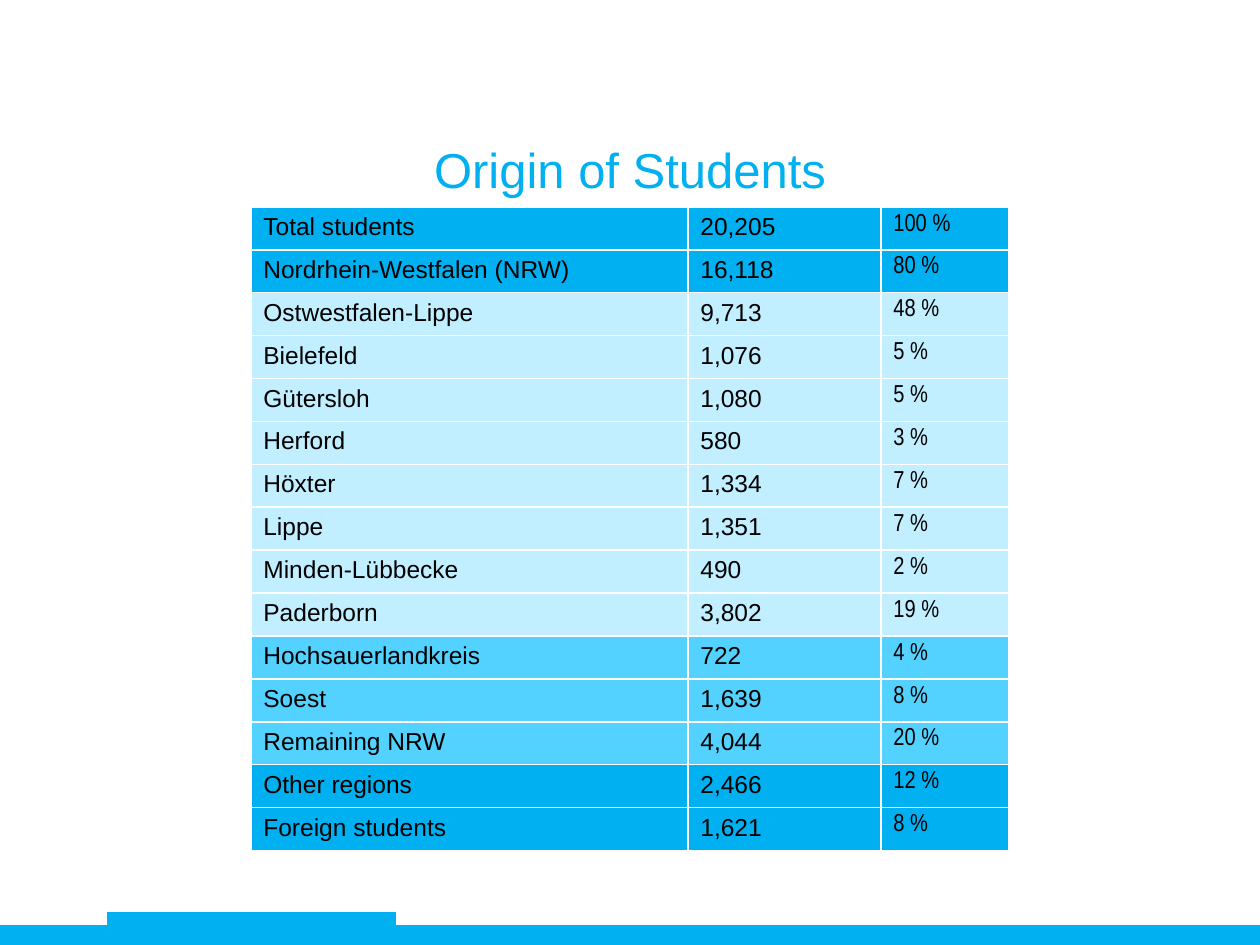
"""Build a slide with a table of the regions students come from."""
import lxml.etree
import pptx
import pptx.dml.color
import pptx.enum.shapes
import pptx.enum.text
import pptx.oxml.ns
import pptx.util

Cm, Pt = pptx.util.Cm, pptx.util.Pt

TITLE = "Origin of Students"
ORIGINS = [
    ("total", "Total students", "20,205", "100 %"),
    ("total", "Nordrhein-Westfalen (NRW)", "16,118", "80 %"),
    ("local", "Ostwestfalen-Lippe", "9,713", "48 %"),
    ("local", "Bielefeld", "1,076", "5 %"),
    ("local", "Gütersloh", "1,080", "5 %"),
    ("local", "Herford", "580", "3 %"),
    ("local", "Höxter", "1,334", "7 %"),
    ("local", "Lippe", "1,351", "7 %"),
    ("local", "Minden-Lübbecke", "490", "2 %"),
    ("local", "Paderborn", "3,802", "19 %"),
    ("state", "Hochsauerlandkreis", "722", "4 %"),
    ("state", "Soest", "1,639", "8 %"),
    ("state", "Remaining NRW", "4,044", "20 %"),
    ("total", "Other regions", "2,466", "12 %"),
    ("total", "Foreign students", "1,621", "8 %"),
]
THEME = {
    "accent": "00B0F0",
    "text": "000000",
    "border": "FFFFFF",
    "groups": {"total": "00B0F0", "local": "C1EFFF", "state": "53D2FF"},
    "title_font": "Arial",
    "column_fonts": ("Arial", "Arial", "Arial Narrow"),
    "title_size": 28,
    "table_size": 14,
    "border_width": 1,
}
SLIDE_SIZE = (25.4, 19.05)
TITLE_BOX = (1.27, 0.94, 22.86, 3.18)
FOOTER_BARS = [(0, 18.65, 25.4, 0.4), (2.16, 18.39, 5.82, 0.33)]
TABLE_TOP, TABLE_HEIGHT = 4.17, 12.98
COLUMN_WIDTHS = (8.81, 3.89, 2.59)


def color(value):
    return pptx.dml.color.RGBColor.from_string(value)


def add_run(paragraph, text, font_name, size, text_color):
    run = paragraph.add_run()
    run.text = text
    run.font.name = font_name
    run.font.size = Pt(size)
    run.font.color.rgb = color(text_color)


def add_footer_bar(slide, box):
    shape = slide.shapes.add_shape(
        pptx.enum.shapes.MSO_SHAPE.RECTANGLE, *map(Cm, box))
    shape.shadow.inherit = False
    shape.fill.solid()
    shape.fill.fore_color.rgb = color(THEME["accent"])
    shape.line.fill.background()


def add_title(slide):
    shape = slide.shapes.add_textbox(*map(Cm, TITLE_BOX))
    frame = shape.text_frame
    frame.word_wrap = True
    frame.vertical_anchor = pptx.enum.text.MSO_ANCHOR.BOTTOM
    paragraph = frame.paragraphs[0]
    paragraph.alignment = pptx.enum.text.PP_ALIGN.CENTER
    add_run(paragraph, TITLE, THEME["title_font"], THEME["title_size"], THEME["accent"])


def add_borders(cell):
    qn = pptx.oxml.ns.qn
    properties = cell._tc.get_or_add_tcPr()
    for side in ("a:lnL", "a:lnR", "a:lnT", "a:lnB"):
        line = lxml.etree.SubElement(
            properties, qn(side), w=str(Pt(THEME["border_width"])))
        fill = lxml.etree.SubElement(line, qn("a:solidFill"))
        lxml.etree.SubElement(fill, qn("a:srgbClr"), val=THEME["border"])


def add_origin_table(slide):
    width = sum(COLUMN_WIDTHS)
    left = (SLIDE_SIZE[0] - width) / 2
    table = slide.shapes.add_table(
        len(ORIGINS), len(COLUMN_WIDTHS),
        Cm(left), Cm(TABLE_TOP), Cm(width), Cm(TABLE_HEIGHT)).table
    table.first_row = table.horz_banding = False
    for column, column_width in zip(table.columns, COLUMN_WIDTHS):
        column.width = Cm(column_width)
    for row, (group, *values) in zip(table.rows, ORIGINS):
        for cell, text, font_name in zip(row.cells, values, THEME["column_fonts"]):
            add_borders(cell)
            cell.fill.solid()
            cell.fill.fore_color.rgb = color(THEME["groups"][group])
            add_run(cell.text_frame.paragraphs[0], text, font_name,
                    THEME["table_size"], THEME["text"])


def main():
    presentation = pptx.Presentation()
    presentation.slide_width, presentation.slide_height = map(Cm, SLIDE_SIZE)
    slide = presentation.slides.add_slide(presentation.slide_layouts[6])
    for box in FOOTER_BARS:
        add_footer_bar(slide, box)
    add_title(slide)
    add_origin_table(slide)
    presentation.save("out.pptx")


if __name__ == "__main__":
    main()
